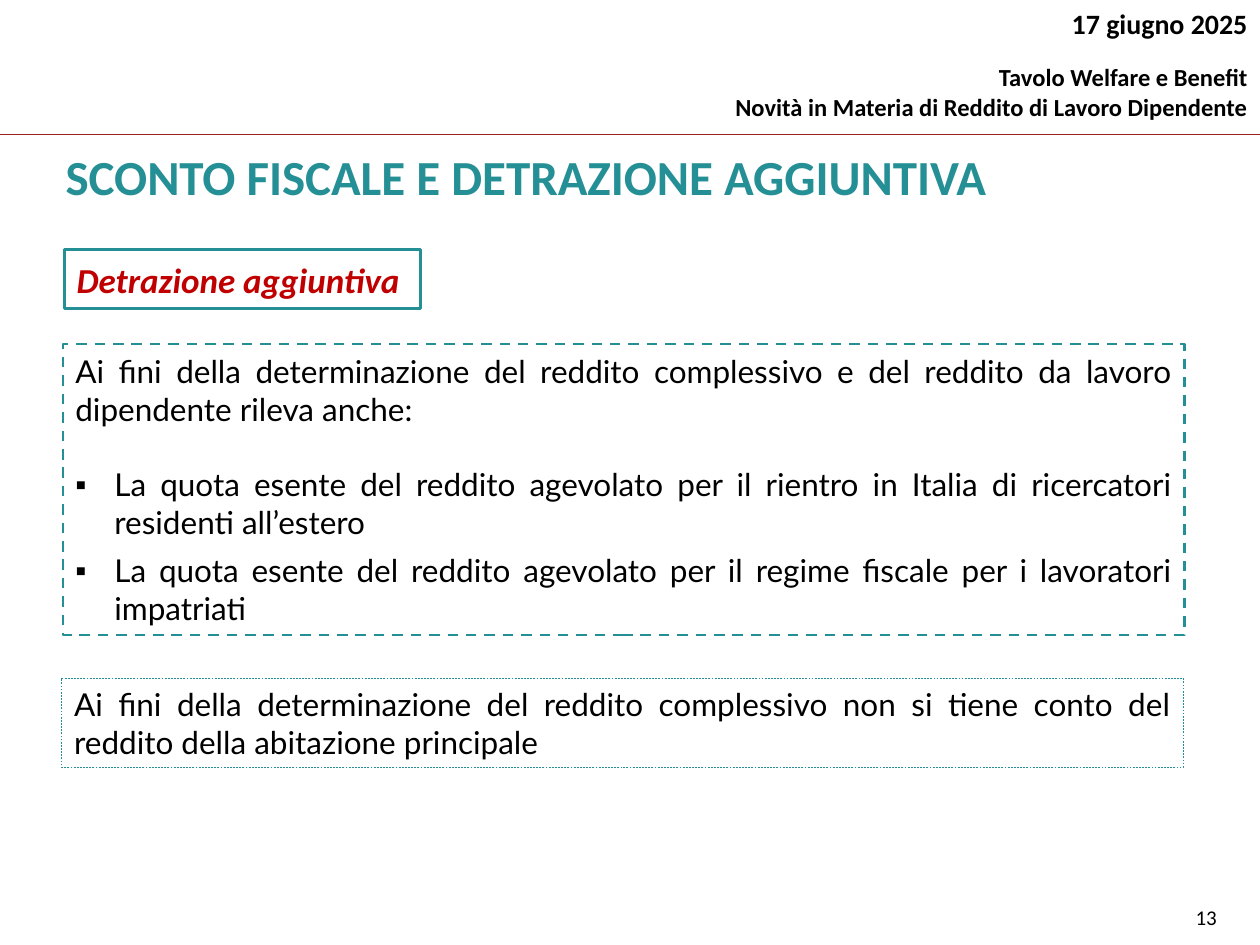
from dataclasses import dataclass

import pptx
import pptx.dml.color
import pptx.enum.dml
import pptx.enum.shapes
import pptx.enum.text
import pptx.oxml
import pptx.oxml.ns
import pptx.util
from lxml import etree

RGBColor = pptx.dml.color.RGBColor
Align = pptx.enum.text.PP_ALIGN
Anchor = pptx.enum.text.MSO_ANCHOR
Dash = pptx.enum.dml.MSO_LINE

TEAL = RGBColor(0x25, 0x8F, 0x96)
RED = RGBColor(0xC0, 0x00, 0x00)
DARK_RED = RGBColor(0x9B, 0x20, 0x1C)
BLACK = RGBColor(0x00, 0x00, 0x00)
WHITE = RGBColor(0xFF, 0xFF, 0xFF)

WIDTH = pptx.util.Inches(10)
HEIGHT = pptx.util.Inches(7.5)
BULLET_INDENT = pptx.util.Inches(0.31)


@dataclass(frozen=True)
class Area:
    """Shares of the slide's width and height, in percent."""
    left: float
    top: float
    width: float
    height: float

    def lengths(self) -> tuple[int, int, int, int]:
        return (int(WIDTH * self.left / 100), int(HEIGHT * self.top / 100),
                int(WIDTH * self.width / 100), int(HEIGHT * self.height / 100))


@dataclass(frozen=True)
class Style:
    size: float
    font: str = "Calibri"
    color: RGBColor = BLACK
    bold: bool = False
    italic: bool = False
    align: Align = Align.LEFT


@dataclass(frozen=True)
class Line:
    text: str
    style: Style
    before: float = 0
    after: float = 0
    bullet: bool = False


@dataclass(frozen=True)
class Panel:
    area: Area
    border: float
    dash: Dash
    lines: tuple[Line, ...]


TITLE = Style(28, color=TEAL, bold=True)
DATE = Style(16, bold=True, align=Align.RIGHT)
EVENT = Style(14, bold=True, align=Align.RIGHT)
NUMBER = Style(12)
LABEL = Style(20, color=RED, bold=True, italic=True, align=Align.JUSTIFY)
BODY = Style(18, font="Lato", align=Align.JUSTIFY)

HEADER = (
    Line("17 giugno 2025", DATE),
    Line("Tavolo Welfare e Benefit", EVENT, before=12.8),
    Line("Novità in Materia di Reddito di Lavoro Dipendente", EVENT),
)

PANELS = (
    Panel(Area(5, 36.4, 89, 30.8), 1.5, Dash.DASH, (
        Line("Ai fini della determinazione del reddito complessivo e del reddito "
             "da lavoro dipendente rileva anche:", BODY),
        Line("La quota esente del reddito agevolato per il rientro in Italia di "
             "ricercatori residenti all’estero", BODY, before=21.6, after=6, bullet=True),
        Line("La quota esente del reddito agevolato per il regime fiscale per i "
             "lavoratori impatriati", BODY, bullet=True),
    )),
    Panel(Area(5.1, 26.4, 28.3, 6.27), 1.5, Dash.SOLID,
          (Line("Detrazione aggiuntiva", LABEL),)),
    Panel(Area(4.9, 71.73, 89, 9.47), 0.25, Dash.DASH, (
        Line("Ai fini della determinazione del reddito complessivo non si tiene "
             "conto del reddito della abitazione principale", BODY),
    )),
)


def add_bullet(para) -> None:
    properties = para._p.get_or_add_pPr()
    properties.set("marL", str(BULLET_INDENT))
    properties.set("indent", str(-BULLET_INDENT))
    for tag, name, value in (("a:buFont", "typeface", "Arial"), ("a:buChar", "char", "▪")):
        etree.SubElement(properties, pptx.oxml.ns.qn(tag)).set(name, value)


def write(frame, lines: tuple[Line, ...], anchor: Anchor) -> None:
    frame.word_wrap = True
    frame.auto_size = pptx.enum.text.MSO_AUTO_SIZE.NONE
    frame.vertical_anchor = anchor
    for index, line in enumerate(lines):
        para = frame.add_paragraph() if index else frame.paragraphs[0]
        para.alignment = line.style.align
        para.line_spacing = 1.0
        para.space_before = pptx.util.Pt(line.before)
        para.space_after = pptx.util.Pt(line.after)
        if line.bullet:
            add_bullet(para)
        span = para.add_run()
        span.text = line.text
        span.font.name = line.style.font
        span.font.size = pptx.util.Pt(line.style.size)
        span.font.bold = line.style.bold
        span.font.italic = line.style.italic
        span.font.color.rgb = line.style.color


def add_text(page, area: Area, lines: tuple[Line, ...]) -> None:
    box = page.shapes.add_textbox(*area.lengths())
    write(box.text_frame, lines, Anchor.TOP)


def add_panel(page, panel: Panel) -> None:
    box = page.shapes.add_shape(pptx.enum.shapes.MSO_SHAPE.RECTANGLE, *panel.area.lengths())
    box.shadow.inherit = False
    box.fill.solid()
    box.fill.fore_color.rgb = WHITE
    box.line.color.rgb = TEAL
    box.line.width = pptx.util.Pt(panel.border)
    box.line.dash_style = panel.dash
    write(box.text_frame, panel.lines, Anchor.MIDDLE)


def add_rule(page, top: float) -> None:
    """Draw the full-width line under the header."""
    height = int(HEIGHT * top / 100)
    rule = page.shapes.add_connector(
        pptx.enum.shapes.MSO_CONNECTOR.STRAIGHT, 0, height, WIDTH, height)
    rule.line.color.rgb = DARK_RED
    rule.line.width = pptx.util.Pt(0.75)
    etree.SubElement(rule._element.spPr, pptx.oxml.ns.qn("a:effectLst"))


def set_title(page, area: Area, text: str) -> None:
    title = page.shapes.title
    title.left, title.top, title.width, title.height = area.lengths()
    write(title.text_frame, (Line(text, TITLE),), Anchor.MIDDLE)


def main() -> None:
    deck = pptx.Presentation()
    deck.slide_width, deck.slide_height = WIDTH, HEIGHT
    page = deck.slides.add_slide(deck.slide_layouts.get_by_name("Title Only"))
    set_title(page, Area(4.2, 14.93, 90.6, 7.33), "SCONTO FISCALE E DETRAZIONE AGGIUNTIVA")
    add_text(page, Area(54.2, 0, 45.8, 13.6), HEADER)
    add_rule(page, 14.27)
    add_text(page, Area(93.9, 95.07, 6.1, 3.87), (Line("13", NUMBER),))
    for panel in PANELS:
        add_panel(page, panel)
    deck.save("out.pptx")


if __name__ == "__main__":
    main()
